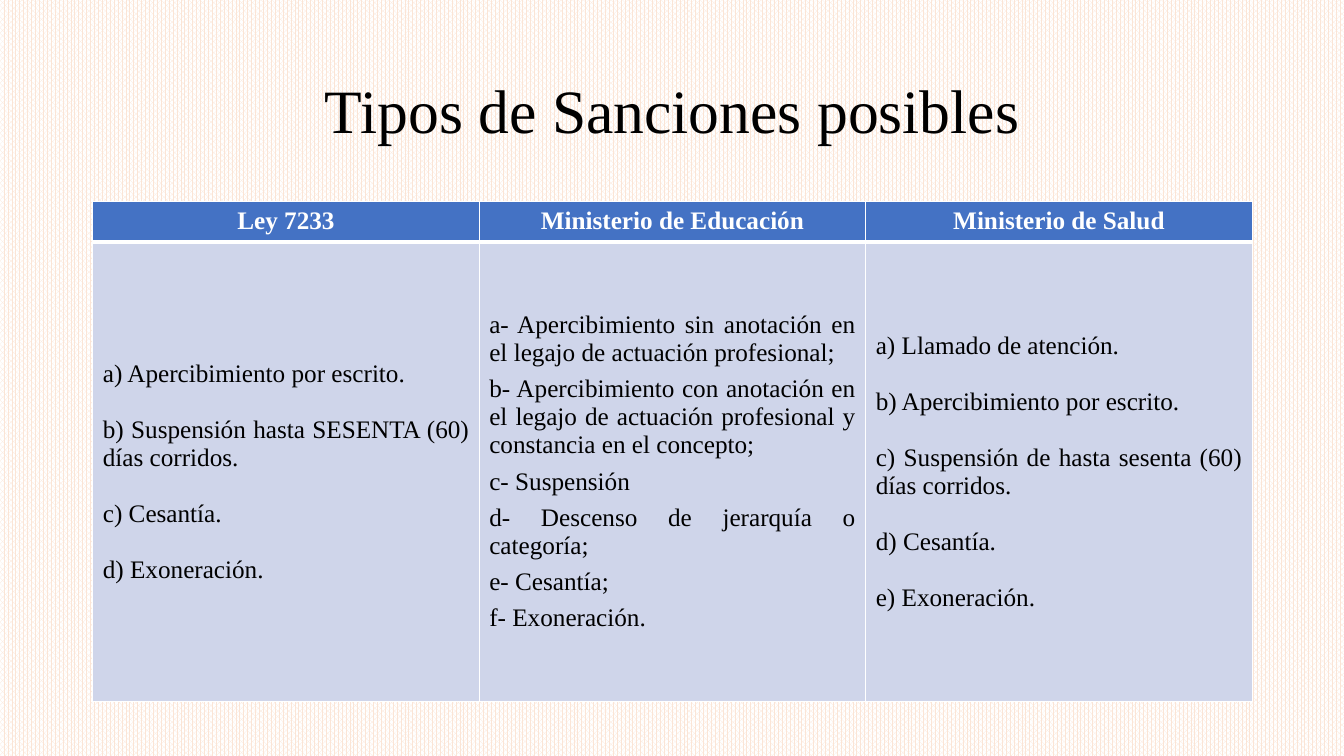
"""Build the slide comparing the possible sanctions under three regimes."""
from dataclasses import dataclass

from lxml.etree import SubElement
from pptx import Presentation
from pptx.dml.color import RGBColor
from pptx.enum.dml import MSO_PATTERN
from pptx.enum.text import MSO_ANCHOR, PP_ALIGN
from pptx.oxml.ns import qn
from pptx.slide import Slide
from pptx.table import _Cell
from pptx.text.text import _Paragraph
from pptx.util import Inches, Pt

FONT = "Times New Roman"
COLORS = {
    "ink": "000000",
    "white": "FFFFFF",
    "peach": "FBE5D6",
    "header": "4472C4",
    "body": "CFD5EA",
}
LEFT, WIDTH = 0.92, 11.5
TABLE_TOP = 2
ROW_HEIGHTS = (0.37, 4.56)
THIN, THICK = 1, 3


@dataclass(frozen=True)
class Regime:
    name: str
    sanctions: tuple[str, ...]
    gap: int


REGIMES = (
    Regime("Ley 7233", (
        "a) Apercibimiento por escrito.",
        "b) Suspensión hasta SESENTA (60) días corridos.",
        "c) Cesantía.",
        "d) Exoneración.",
    ), 20),
    Regime("Ministerio de Educación", (
        "a- Apercibimiento sin anotación en el legajo de actuación profesional;",
        "b- Apercibimiento con anotación en el legajo de actuación profesional "
        "y constancia en el concepto;",
        "c- Suspensión",
        "d- Descenso de jerarquía o categoría;",
        "e- Cesantía;",
        "f- Exoneración.",
    ), 6),
    Regime("Ministerio de Salud", (
        "a) Llamado de atención.",
        "b) Apercibimiento por escrito.",
        "c) Suspensión de hasta sesenta (60) días corridos.",
        "d) Cesantía.",
        "e) Exoneración.",
    ), 20),
)


def rgb(color: str) -> RGBColor:
    return RGBColor.from_string(COLORS[color])


def format_paragraph(paragraph: _Paragraph, size: int, color: str,
                     align: PP_ALIGN, bold: bool = False) -> None:
    paragraph.alignment = align
    paragraph.font.name = FONT
    paragraph.font.size = Pt(size)
    paragraph.font.bold = bold
    paragraph.font.color.rgb = rgb(color)


def style_cell(cell: _Cell, fill: str, top: int, bottom: int) -> None:
    properties = cell._tc.get_or_add_tcPr()
    for side, points in (("L", THIN), ("R", THIN), ("T", top), ("B", bottom)):
        border = SubElement(properties, qn(f"a:ln{side}"), w=str(Pt(points)))
        SubElement(SubElement(border, qn("a:solidFill")), qn("a:srgbClr"),
                   val=COLORS["white"])
    cell.fill.solid()
    cell.fill.fore_color.rgb = rgb(fill)


def paint_background(slide: Slide) -> None:
    fill = slide.background.fill
    fill.patterned()
    fill.pattern = MSO_PATTERN.PERCENT_75
    fill.fore_color.rgb = rgb("peach")
    fill.back_color.rgb = rgb("white")


def add_title(slide: Slide, wording: str) -> None:
    title = slide.shapes.add_textbox(
        Inches(LEFT), Inches(0.4), Inches(WIDTH), Inches(1.45)).text_frame
    title.word_wrap = True
    title.vertical_anchor = MSO_ANCHOR.MIDDLE
    title.text = wording
    title.paragraphs[0].line_spacing = 0.9
    format_paragraph(title.paragraphs[0], 44, "ink", PP_ALIGN.CENTER)


def add_sanctions(slide: Slide, regimes: tuple[Regime, ...]) -> None:
    table = slide.shapes.add_table(
        len(ROW_HEIGHTS), len(regimes), Inches(LEFT), Inches(TABLE_TOP),
        Inches(WIDTH), Inches(sum(ROW_HEIGHTS))).table
    for row, height in zip(table.rows, ROW_HEIGHTS):
        row.height = Inches(height)
    for column, regime in enumerate(regimes):
        heading, body = table.cell(0, column), table.cell(1, column)
        style_cell(heading, "header", THIN, THICK)
        heading.text = regime.name
        format_paragraph(heading.text_frame.paragraphs[0], 18, "white",
                         PP_ALIGN.CENTER, bold=True)
        style_cell(body, "body", THICK, THIN)
        body.vertical_anchor = MSO_ANCHOR.MIDDLE
        body.text = "\n".join(regime.sanctions)
        for sanction in body.text_frame.paragraphs:
            format_paragraph(sanction, 18, "ink", PP_ALIGN.JUSTIFY)
            sanction.space_after = Pt(regime.gap)


def main() -> None:
    presentation = Presentation()
    presentation.slide_width = Inches(13.33)
    presentation.slide_height = Inches(7.5)
    slide = presentation.slides.add_slide(presentation.slide_layouts[6])
    paint_background(slide)
    add_title(slide, "Tipos de Sanciones posibles")
    add_sanctions(slide, REGIMES)
    presentation.save("out.pptx")


if __name__ == "__main__":
    main()
